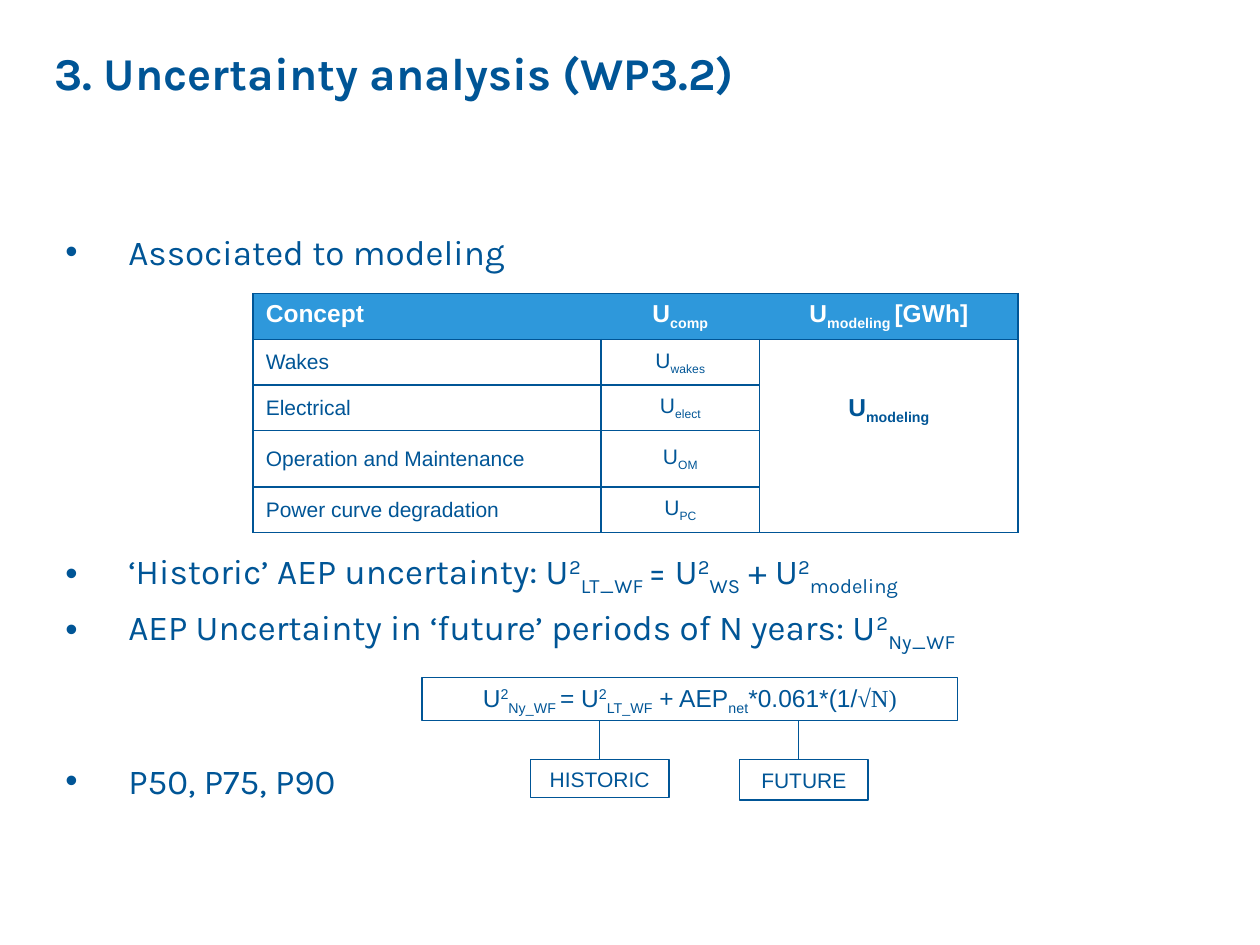
"""Build the slide on uncertainty analysis of modelled energy production."""
from typing import NamedTuple

from lxml import etree
from pptx import Presentation
from pptx.dml.color import RGBColor
from pptx.enum import shapes, text
from pptx.oxml import ns
from pptx.util import Inches, Pt

BLUE, SKY, WHITE = "005596", "2E98DB", "FFFFFF"
CENTER, LEFT = text.PP_ALIGN.CENTER, text.PP_ALIGN.LEFT


class Run(NamedTuple):
    text: str
    baseline: int = 0
    font: str = ""


class Bullet(NamedTuple):
    runs: list[Run]
    space_before: float


class Box(NamedTuple):
    runs: list[Run]
    left: float
    top: float
    width: float
    height: float
    size: int


def sup(content: str) -> Run:
    return Run(content, 30)


def sub(content: str) -> Run:
    return Run(content, -25)


def color(value: str) -> RGBColor:
    return RGBColor.from_string(value)


def write(paragraph, runs: list[Run], size: int, font: str = "Arial",
          ink: str = BLUE, bold: bool = False, align=LEFT) -> None:
    paragraph.alignment = align
    paragraph.font.size = Pt(size)
    paragraph.font.name = font
    paragraph.font.bold = bold
    paragraph.font.color.rgb = color(ink)
    for part in runs:
        run = paragraph.add_run()
        run.text = part.text
        if part.baseline:
            run._r.get_or_add_rPr().set("baseline", str(part.baseline * 1000))
        if part.font:
            run.font.name = part.font


def add_bullets(slide, bullets: list[Bullet]) -> None:
    frame = slide.shapes.add_textbox(
        Inches(0.42), Inches(1.78), Inches(8.67), Inches(4.95)).text_frame
    frame.word_wrap = True
    for index, bullet in enumerate(bullets):
        paragraph = frame.add_paragraph() if index else frame.paragraphs[0]
        if bullet.space_before:
            paragraph.space_before = Pt(bullet.space_before)
        properties = paragraph._p.get_or_add_pPr()
        properties.set("marL", str(Inches(0.5)))
        properties.set("indent", str(-Inches(0.5)))
        etree.SubElement(properties, ns.qn("a:buFont"), typeface="Arial")
        etree.SubElement(properties, ns.qn("a:buChar"), char="•")
        write(paragraph, bullet.runs, 20, "Karla")


def set_borders(cell, hidden: set[str]) -> None:
    properties = cell._tc.get_or_add_tcPr()
    for index, side in enumerate("LRTB"):
        line = etree.Element(ns.qn(f"a:ln{side}"), w=str(Pt(1)))
        if side in hidden:
            etree.SubElement(line, ns.qn("a:noFill"))
        else:
            fill = etree.SubElement(line, ns.qn("a:solidFill"))
            etree.SubElement(fill, ns.qn("a:srgbClr"), val=BLUE)
        properties.insert(index, line)


def add_concept_table(slide) -> None:
    header = [[Run("Concept")], [Run("U"), sub("comp")],
              [Run("U"), sub("modeling "), Run("[GWh]")]]
    components = [("Wakes", "wakes"), ("Electrical", "elect"),
                  ("Operation and Maintenance", "OM"),
                  ("Power curve degradation", "PC")]
    widths, heights = [2.76, 1.26, 2.05], [0.36, 0.36, 0.36, 0.45, 0.36]
    table = slide.shapes.add_table(
        len(heights), len(widths), Inches(2.01), Inches(2.33),
        Inches(sum(widths)), Inches(sum(heights))).table
    table.first_row = table.horz_banding = False
    for column, width in zip(table.columns, widths):
        column.width = Inches(width)
    for row, height in zip(table.rows, heights):
        row.height = Inches(height)

    header_hidden = [{"R"}, {"L", "R"}, {"L"}]
    for row_index, row in enumerate(table.rows):
        for column_index, cell in enumerate(row.cells):
            cell.fill.solid()
            cell.fill.fore_color.rgb = color(WHITE if row_index else SKY)
            set_borders(cell, set() if row_index else header_hidden[column_index])

    for index, runs in enumerate(header):
        write(table.cell(0, index).text_frame.paragraphs[0], runs, 14,
              ink=WHITE, bold=True, align=CENTER if index else LEFT)
    for row_index, (concept, symbol) in enumerate(components, 1):
        row_runs = [[Run(concept)], [Run("U"), sub(symbol)]]
        for index, runs in enumerate(row_runs):
            cell = table.cell(row_index, index)
            cell.vertical_anchor = text.MSO_ANCHOR.MIDDLE
            write(cell.text_frame.paragraphs[0], runs, 12,
                  align=CENTER if index else LEFT)

    total = table.cell(1, 2)
    total.merge(table.cell(len(components), 2))
    total.margin_top = Inches(0.43)
    write(total.text_frame.paragraphs[0], [Run("U"), sub("modeling")], 14,
          bold=True, align=CENTER)


def add_box(slide, box: Box) -> None:
    shape = slide.shapes.add_shape(
        shapes.MSO_SHAPE.RECTANGLE, Inches(box.left), Inches(box.top),
        Inches(box.width), Inches(box.height))
    shape.shadow.inherit = False
    shape.fill.background()
    shape.line.color.rgb = color(BLUE)
    shape.line.width = Pt(0.75)
    shape.text_frame.word_wrap = True
    write(shape.text_frame.paragraphs[0], box.runs, box.size, align=CENTER)


def add_stem(slide, x: float, top: float, bottom: float) -> None:
    stem = slide.shapes.add_connector(
        shapes.MSO_CONNECTOR.STRAIGHT, Inches(x), Inches(top),
        Inches(x), Inches(bottom))
    stem.line.color.rgb = color(BLUE)
    stem.line.width = Pt(0.75)
    etree.SubElement(stem._element.spPr, ns.qn("a:effectLst"))


def main() -> None:
    deck = Presentation()
    deck.slide_width, deck.slide_height = Inches(10), Inches(7.5)
    slide = deck.slides.add_slide(deck.slide_layouts[5])

    title = slide.shapes.title
    title.left, title.top = Inches(0.33), Inches(0.25)
    title.width, title.height = Inches(8.75), Inches(0.65)
    title.text_frame.vertical_anchor = text.MSO_ANCHOR.MIDDLE
    write(title.text_frame.paragraphs[0],
          [Run("3. Uncertainty analysis (WP3.2)")], 26, "Karla", bold=True)

    add_bullets(slide, [
        Bullet([Run("Associated to modeling")], 0),
        Bullet([Run("‘Historic’ AEP uncertainty: U"), sup("2"), sub("LT_WF "),
                Run("= U"), sup("2"), sub("WS"),
                Run(" + U"), sup("2"), sub("modeling")], 158.5),
        Bullet([Run("AEP Uncertainty in ‘future’ periods of N years: U"),
                sup("2"), sub("Ny_WF")], 4.7),
        Bullet([Run("P50, P75, P90")], 60.5),
    ])
    add_concept_table(slide)

    formula = Box([Run("U"), sup("2"), sub("Ny_WF "), Run("= U"), sup("2"),
                   sub("LT_WF"), Run(" + AEP"), sub("net"), Run("*0.061*(1/"),
                   Run("√N)", font="Times New Roman")],
                  3.35, 5.38, 4.25, 0.34, 14)
    historic = Box([Run("HISTORIC")], 4.21, 6.03, 1.1, 0.3, 12)
    future = Box([Run("FUTURE")], 5.87, 6.03, 1.02, 0.32, 12)
    for box in (formula, historic, future):
        add_box(slide, box)
    for x in (4.76, 6.34):
        add_stem(slide, x, formula.top + formula.height, historic.top)

    deck.save("out.pptx")


if __name__ == "__main__":
    main()
